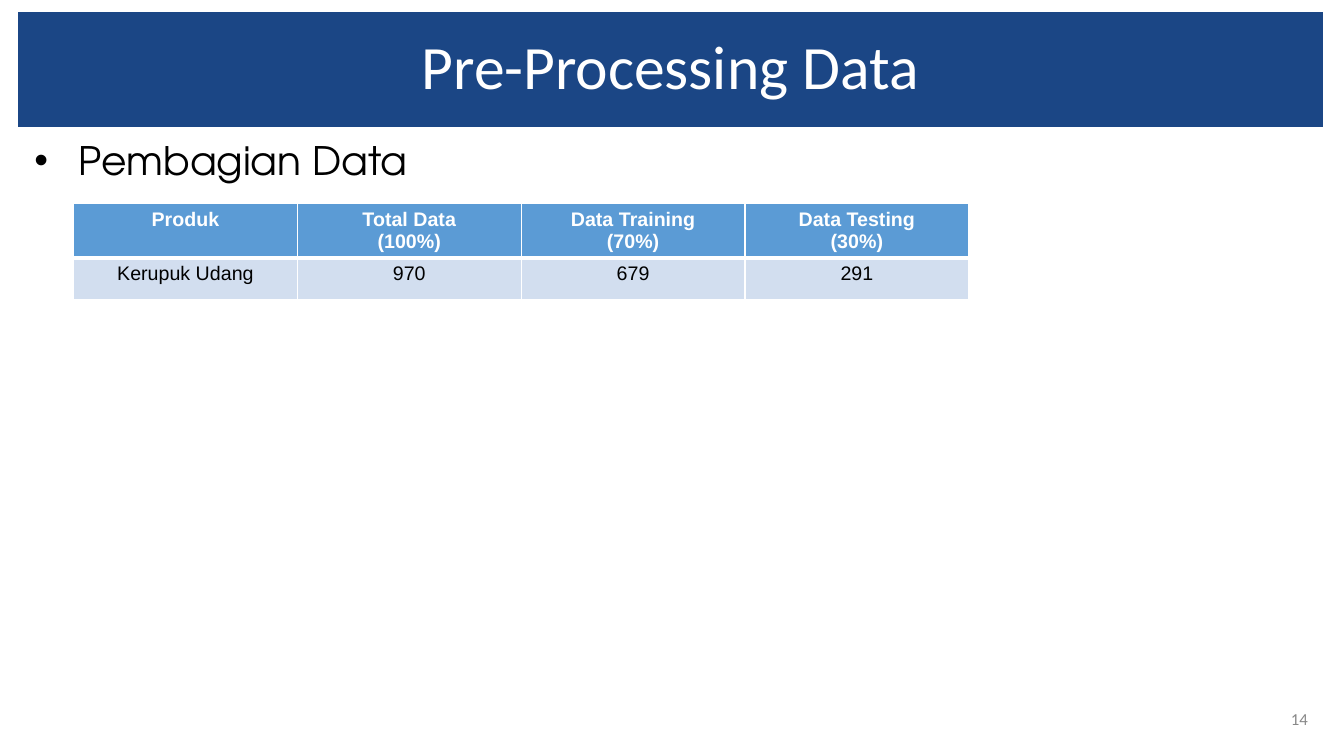
from dataclasses import dataclass

from lxml import etree
from pptx import Presentation
from pptx import util as u
from pptx.dml.color import RGBColor
from pptx.enum import text
from pptx.oxml import ns

TITLE = "Pre-Processing Data"
BULLETS = ["Pembagian Data"]
HEADER = [["Produk"], ["Total Data", "(100%)"], ["Data Training", "(70%)"], ["Data Testing", "(30%)"]]
ROWS = [[["Kerupuk Udang"], ["970"], ["679"], ["291"]]]
PAGE = "14"


@dataclass(frozen=True)
class Theme:
    navy: str = "1B4685"
    blue: str = "5B9BD5"
    pale: str = "D2DEEF"
    white: str = "FFFFFF"
    black: str = "000000"
    grey: str = "888888"
    title_font: str = "Calibri"
    body_font: str = "TeX Gyre Adventor"
    table_font: str = "Arial"
    title_size: int = 44
    body_size: int = 28
    table_size: int = 14
    page_size: int = 12


T = Theme()
PX = u.Inches(1) // 100
LEFT, WIDTH = 18, 1294
TABLE_LEFT, TABLE_TOP, COL_W = 73, 202, 222
HEADER_H, ROW_H = 53, 41
BULLET_INDENT, BULLET_HANG = 50, 44


def px(*lengths):
    return [n * PX for n in lengths]


def place(shape, *box):
    shape.left, shape.top, shape.width, shape.height = px(*box)


def write(tf, lines, font, size, color, align, bold=False):
    """Write one run per paragraph and return the paragraphs."""
    for i, line in enumerate(lines):
        p = tf.paragraphs[0] if i == 0 else tf.add_paragraph()
        p.alignment = align
        r = p.add_run()
        r.text = line
        r.font.name, r.font.size, r.font.bold = font, u.Pt(size), bold
        r.font.color.rgb = RGBColor.from_string(color)
    return tf.paragraphs


def fill(target, color):
    target.fill.solid()
    target.fill.fore_color.rgb = RGBColor.from_string(color)


def set_borders(cell, bottom):
    tc_pr = cell._tc.get_or_add_tcPr()
    widths = {"lnL": 1, "lnR": 1, "lnT": 1, "lnB": bottom}
    for i, (side, width) in enumerate(widths.items()):
        ln = etree.Element(ns.qn("a:" + side), w=str(u.Pt(width)))
        solid = etree.SubElement(ln, ns.qn("a:solidFill"))
        etree.SubElement(solid, ns.qn("a:srgbClr"), val=T.white)
        tc_pr.insert(i, ln)


def add_title(s):
    title = s.shapes.title
    place(title, LEFT, 12, WIDTH, 114)
    fill(title, T.navy)
    tf = title.text_frame
    tf.auto_size = text.MSO_AUTO_SIZE.NONE
    tf.vertical_anchor = text.MSO_ANCHOR.MIDDLE
    for p in write(tf, [TITLE], T.title_font, T.title_size, T.white, text.PP_ALIGN.CENTER):
        p.line_spacing = 0.9


def add_bullets(s):
    body = s.placeholders[1]
    place(body, LEFT, 135, WIDTH, 557)
    tf = body.text_frame
    tf.auto_size = text.MSO_AUTO_SIZE.NONE
    for p in write(tf, BULLETS, T.body_font, T.body_size, T.black, text.PP_ALIGN.LEFT):
        p.line_spacing, p.space_before = 0.9, u.Pt(0)
        p_pr = p._p.get_or_add_pPr()
        p_pr.set("marL", str(BULLET_INDENT * PX))
        p_pr.set("indent", str(-BULLET_HANG * PX))
        etree.SubElement(p_pr, ns.qn("a:buFont"), typeface="Arial")
        etree.SubElement(p_pr, ns.qn("a:buChar"), char="•")


def add_split_table(s):
    rows = [HEADER] + ROWS
    heights = [HEADER_H] + [ROW_H] * len(ROWS)
    box = px(TABLE_LEFT, TABLE_TOP, COL_W * len(HEADER), sum(heights))
    table = s.shapes.add_table(len(rows), len(HEADER), *box).table
    for col in table.columns:
        col.width = COL_W * PX
    for i, (row, height) in enumerate(zip(rows, heights)):
        table.rows[i].height = height * PX
        head = i == 0
        for j, lines in enumerate(row):
            cell = table.cell(i, j)
            fill(cell, T.blue if head else T.pale)
            set_borders(cell, 3 if head else 1)
            write(cell.text_frame, lines, T.table_font, T.table_size,
                  T.white if head else T.black, text.PP_ALIGN.CENTER, head)


def add_page_number(s):
    tf = s.shapes.add_textbox(*px(1250, 693, 57, 40)).text_frame
    tf.word_wrap = True
    tf.vertical_anchor = text.MSO_ANCHOR.MIDDLE
    write(tf, [PAGE], T.title_font, T.page_size, T.grey, text.PP_ALIGN.RIGHT)


def main():
    prs = Presentation()
    prs.slide_width, prs.slide_height = px(1333, 750)
    s = prs.slides.add_slide(prs.slide_layouts[1])
    add_title(s)
    add_bullets(s)
    add_split_table(s)
    add_page_number(s)
    prs.save("out.pptx")


if __name__ == "__main__":
    main()
